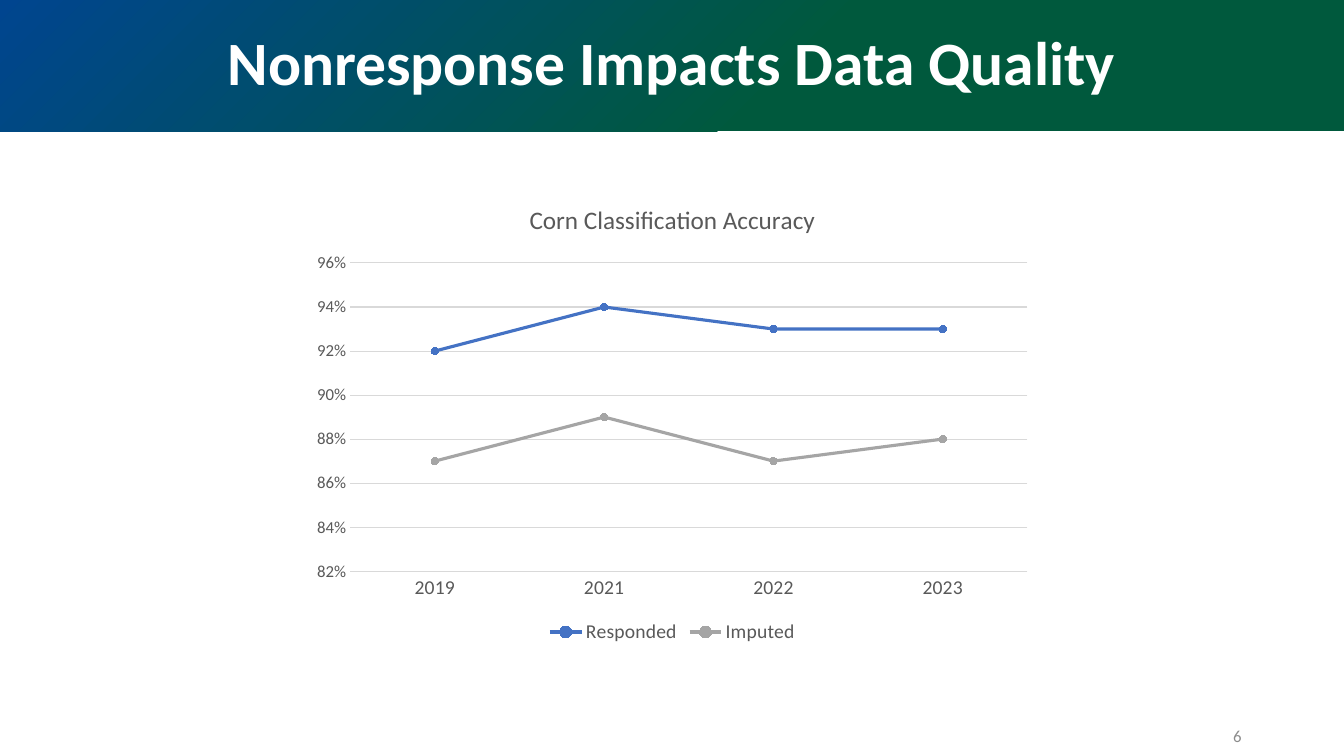
"""Build the slide on nonresponse and corn classification accuracy."""
from lxml.etree import SubElement
from pptx import Presentation
from pptx.chart.data import CategoryChartData
from pptx.dml.color import RGBColor
from pptx.enum.chart import XL_CHART_TYPE as ChartType, XL_LEGEND_POSITION as LegendPosition
from pptx.enum.chart import XL_MARKER_STYLE as MarkerStyle, XL_TICK_MARK as TickMark
from pptx.enum.text import MSO_ANCHOR as Anchor, MSO_AUTO_SIZE as AutoSize, PP_ALIGN as Align
from pptx.oxml.ns import qn
from pptx.util import Pt

COLORS = {
    "blue": "00458F", "green": "00593D", "white": "FFFFFF", "number": "8C8C8C",
    "text": "595959", "grid": "D9D9D9", "Responded": "4472C4", "Imputed": "A5A5A5",
}
ACCURACY = {
    "Responded": (0.92, 0.94, 0.93, 0.93),
    "Imputed": (0.87, 0.89, 0.87, 0.88),
}


def color(name):
    return RGBColor.from_string(COLORS[name])


def set_font(font, size, color_name, bold=False):
    for name, value in {"name": "Calibri", "size": Pt(size), "bold": bold}.items():
        setattr(font, name, value)
    font.color.rgb = color(color_name)


presentation = Presentation()
presentation.slide_width, presentation.slide_height = Pt(960), Pt(540)
slide = presentation.slides.add_slide(presentation.slide_layouts[5])

title = slide.shapes.title
title.left, title.top, title.width, title.height = Pt(0), Pt(0), Pt(960), Pt(93.6)
title.fill.gradient()
for stop, name, position in zip(title.fill.gradient_stops, ("blue", "green"), (0, 0.59)):
    stop.color.rgb = color(name)
    stop.position = position
gradient = title.element.spPr.find(qn("a:gradFill"))
gradient.remove(gradient.find(qn("a:lin")))
circle = SubElement(gradient, qn("a:path"), {"path": "circle"})
SubElement(circle, qn("a:fillToRect"), {"r": "100000", "b": "100000"})

chart_data = CategoryChartData(number_format="0%")
chart_data.categories = ["2019", "2021", "2022", "2023"]
for name, values in ACCURACY.items():
    chart_data.add_series(name, values)
chart = slide.shapes.add_chart(
    ChartType.LINE_MARKERS, Pt(216), Pt(131), Pt(528.5), Pt(332), chart_data
).chart
set_font(chart.font, 10, "text")

chart.has_title = True
chart.chart_title.include_in_layout = False
heading = chart.chart_title.text_frame.paragraphs[0]
heading.text = "Corn Classification Accuracy"
set_font(heading.runs[0].font, 18, "text")

chart.has_legend = True
chart.legend.position = LegendPosition.BOTTOM
chart.legend.include_in_layout = False
set_font(chart.legend.font, 14, "text")

for axis, size in ((chart.category_axis, 14), (chart.value_axis, 12)):
    axis.major_tick_mark = axis.minor_tick_mark = TickMark.NONE
    set_font(axis.tick_labels.font, size, "text")
value_axis = chart.value_axis
for name, value in {"minimum_scale": 0.82, "maximum_scale": 0.96, "major_unit": 0.02}.items():
    setattr(value_axis, name, value)
value_axis.tick_labels.number_format = "0%"
value_axis.tick_labels.number_format_is_linked = False
value_axis.format.line.fill.background()
for line in (chart.category_axis.format.line, value_axis.major_gridlines.format.line):
    line.color.rgb = color("grid")
    line.width = Pt(0.75)

plot = chart.plots[0]
plot.vary_by_categories = False
for series in plot.series:
    series.smooth = False
    series.format.line.color.rgb = color(series.name)
    series.format.line.width = Pt(2.25)
    series.marker.style = MarkerStyle.CIRCLE
    series.marker.size = 5
    series.marker.format.fill.solid()
    series.marker.format.fill.fore_color.rgb = color(series.name)
    series.marker.format.line.color.rgb = color(series.name)

number_box = slide.shapes.add_textbox(Pt(678), Pt(511), Pt(216), Pt(29))
for shape, text, align, size, name, bold in (
    (title, "Nonresponse Impacts Data Quality", Align.CENTER, 44, "white", True),
    (number_box, "6", Align.RIGHT, 12, "number", False),
):
    frame = shape.text_frame
    frame.text = text
    frame.word_wrap = True
    frame.auto_size = AutoSize.NONE
    frame.vertical_anchor = Anchor.MIDDLE
    paragraph = frame.paragraphs[0]
    paragraph.alignment = align
    set_font(paragraph.runs[0].font, size, name, bold)
title.text_frame.paragraphs[0].line_spacing = 0.9

presentation.save("out.pptx")
